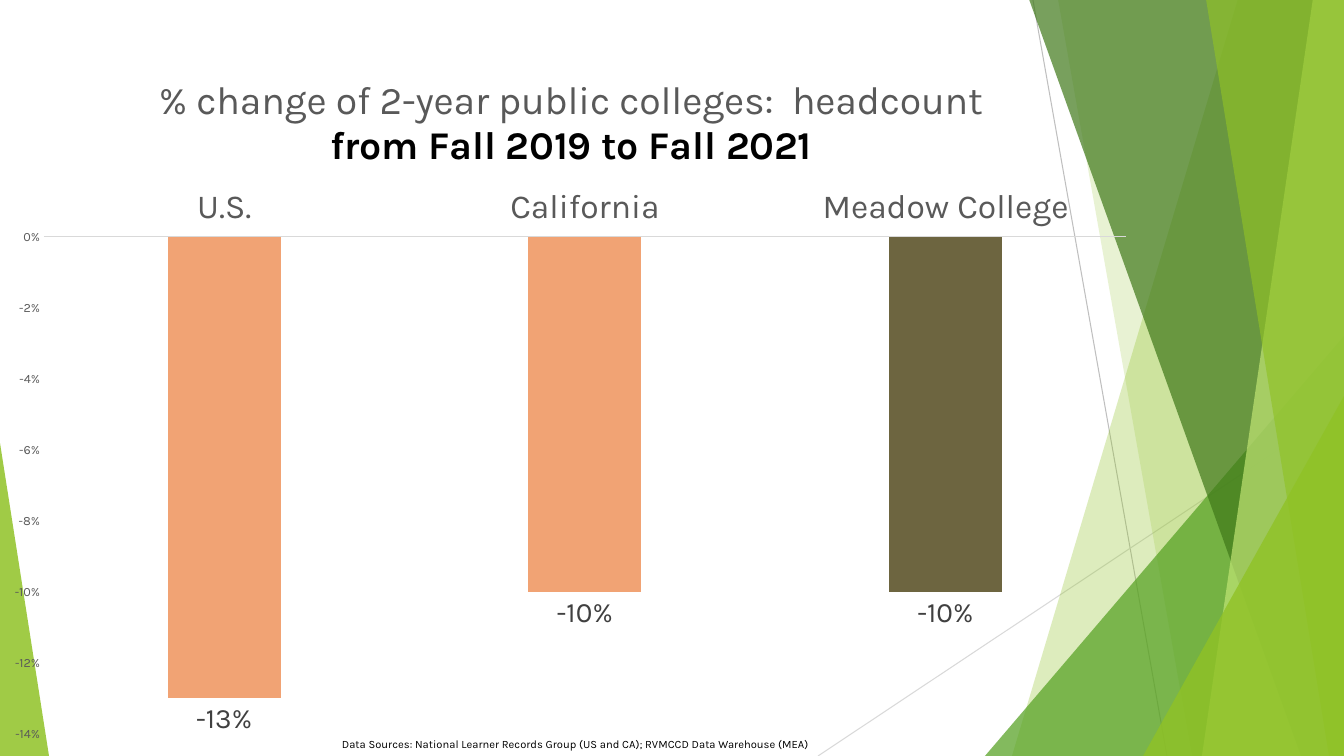
from lxml.etree import SubElement
from pptx import Presentation
from pptx.chart.data import CategoryChartData
from pptx.dml.color import RGBColor
from pptx.enum.chart import XL_CHART_TYPE, XL_LABEL_POSITION, XL_TICK_LABEL_POSITION, XL_TICK_MARK
from pptx.enum.shapes import MSO_CONNECTOR, MSO_SHAPE
from pptx.enum.text import MSO_AUTO_SIZE
from pptx.oxml import parse_xml
from pptx.oxml.ns import nsdecls, qn
from pptx.util import Pt

PX = 914400 / 100.8
SLIDE_W, SLIDE_H = 1344, 756
CHART_W, CHART_H = 1157, 702
FONT = "Karla"

BLACK = RGBColor(0x00, 0x00, 0x00)
DARK_GRAY = RGBColor(0x40, 0x40, 0x40)
GRAY = RGBColor(0x59, 0x59, 0x59)
MID_GRAY = RGBColor(0xBF, 0xBF, 0xBF)
LIGHT_GRAY = RGBColor(0xD9, 0xD9, 0xD9)
LIME = RGBColor(0x90, 0xC2, 0x26)
PALE_LIME = RGBColor(0xC0, 0xE4, 0x74)
GREEN = RGBColor(0x54, 0xA0, 0x21)
DARK_GREEN = RGBColor(0x3F, 0x78, 0x19)
ORANGE = RGBColor(0xF1, 0xA3, 0x74)
OLIVE = RGBColor(0x6D, 0x65, 0x40)

# Headcount change, with the colour of each column
HEADCOUNT = [
    ("U.S.", -0.13, ORANGE),
    ("California", -0.10, ORANGE),
    ("Meadow College", -0.10, OLIVE),
]
HEADING = [
    ("% change of 2-year public colleges:  headcount", False, GRAY),
    ("from Fall 2019 to Fall 2021", True, BLACK),
]


def px(length):
    return round(length * PX)


def style_font(font, size, color, bold=False):
    font.name = FONT
    font.size = Pt(size)
    font.bold = bold
    font.color.rgb = color


def paint(shape, color, opacity):
    """Flat, borderless fill; opacity in percent."""
    shape.shadow.inherit = False
    shape.line.fill.background()
    shape.fill.solid()
    shape.fill.fore_color.rgb = color
    srgb = shape.fill._xPr.find(".//" + qn("a:srgbClr"))
    SubElement(srgb, qn("a:alpha"), val=str(opacity * 1000))


def add_thin_line(slide, x1, y1, x2, y2, color):
    line = slide.shapes.add_connector(
        MSO_CONNECTOR.STRAIGHT, px(x1), px(y1), px(x2), px(y2))
    line.line.color.rgb = color
    line.line.width = Pt(0.75)
    SubElement(line._element.spPr, qn("a:effectLst"))


def add_band(slide, top_x, bottom_x, color, opacity):
    """Full-height band from a slanted left edge to the slide's right edge."""
    builder = slide.shapes.build_freeform(px(top_x), px(-1), scale=1.0)
    corners = [(SLIDE_W, -1), (SLIDE_W, SLIDE_H), (bottom_x, SLIDE_H)]
    builder.add_line_segments([(px(x), px(y)) for x, y in corners], close=True)
    paint(builder.convert_to_shape(), color, opacity)


def add_corner(slide, left, top, width, apex, color, opacity):
    """Triangle standing on the slide's bottom edge."""
    corner = slide.shapes.add_shape(
        MSO_SHAPE.ISOSCELES_TRIANGLE, px(left), px(top), px(width), px(SLIDE_H - top))
    corner.adjustments[0] = apex
    paint(corner, color, opacity)


def place_in_chart(element, position, left, top, width=None, height=None):
    """Manual layout in px from the chart's corner; a size marks the inner plot."""
    values = {"xMode": "edge", "yMode": "edge", "x": left / CHART_W, "y": top / CHART_H}
    if width:
        values = {"layoutTarget": "inner", **values,
                  "w": width / CHART_W, "h": height / CHART_H}
    tags = "".join(f'<c:{tag} val="{val}"/>' for tag, val in values.items())
    for old in element.findall(qn("c:layout")):
        element.remove(old)
    element.insert(position, parse_xml(
        f'<c:layout {nsdecls("c")}><c:manualLayout>{tags}</c:manualLayout></c:layout>'))


def add_heading(chart):
    title = chart.chart_title
    frame = title.text_frame
    frame.text = "\n".join(text for text, _, _ in HEADING)
    for paragraph, (_, bold, color) in zip(frame.paragraphs, HEADING):
        style_font(paragraph.runs[0].font, 28, color, bold)
    title.include_in_layout = False
    place_in_chart(title._element, 1, 164, 20)


def format_axes(chart):
    regions, change = chart.category_axis, chart.value_axis
    for axis, size in ((regions, 24), (change, 9)):
        axis.major_tick_mark = axis.minor_tick_mark = XL_TICK_MARK.NONE
        axis.has_major_gridlines = False
        style_font(axis.tick_labels.font, size, GRAY)
    regions.tick_label_position = XL_TICK_LABEL_POSITION.HIGH
    regions.format.line.color.rgb = LIGHT_GRAY
    regions.format.line.width = Pt(0.75)
    change.minimum_scale, change.maximum_scale = -0.14, 0
    change.major_unit = 0.02
    change.tick_labels.number_format = "0%"
    change.tick_labels.number_format_is_linked = False
    change.format.line.fill.background()


def format_columns(plot):
    plot.gap_width = 219
    plot.overlap = -27
    plot.vary_by_categories = False
    columns = plot.series[0]
    columns.invert_if_negative = False
    columns.format.fill.solid()
    columns.format.fill.fore_color.rgb = LIME
    for index, (_, _, color) in enumerate(HEADCOUNT):
        fill = columns.points[index].format.fill
        fill.solid()
        fill.fore_color.rgb = color
    labels = columns.data_labels
    labels.show_value = True
    labels.position = XL_LABEL_POSITION.OUTSIDE_END
    labels.number_format = "0%"
    labels.number_format_is_linked = False
    style_font(labels.font, 20, DARK_GRAY)


def add_headcount_chart(slide):
    data = CategoryChartData(number_format="0%")
    data.categories = [region for region, _, _ in HEADCOUNT]
    data.add_series("Series 1", [value for _, value, _ in HEADCOUNT])
    chart = slide.shapes.add_chart(
        XL_CHART_TYPE.COLUMN_CLUSTERED,
        px(-8), px(54), px(CHART_W), px(CHART_H), data).chart
    style_font(chart.font, 10, BLACK)
    chart.has_legend = False
    add_heading(chart)
    format_axes(chart)
    format_columns(chart.plots[0])
    place_in_chart(chart._chartSpace.chart.plotArea, 0, 52, 183, 1082, 497)


def add_source_note(slide):
    note = slide.shapes.add_textbox(px(332), px(732), px(492), px(24))
    frame = note.text_frame
    frame.word_wrap = False
    frame.auto_size = MSO_AUTO_SIZE.SHAPE_TO_FIT_TEXT
    frame.text = ("Data Sources: National Learner Records Group (US and CA); "
                  "RVMCCD Data Warehouse (MEA)")
    style_font(frame.paragraphs[0].runs[0].font, 8, BLACK)


def main():
    deck = Presentation()
    deck.slide_width, deck.slide_height = px(SLIDE_W), px(SLIDE_H)
    slide = deck.slides.add_slide(deck.slide_layouts[6])

    # Green facets, back to front
    add_thin_line(slide, 1033, 0, 1167, SLIDE_H, MID_GRAY)
    add_thin_line(slide, SLIDE_W, 406, 818, SLIDE_H, LIGHT_GRAY)
    add_band(slide, 1238, 1012, LIME, 30)
    add_band(slide, 1058, 1192, LIME, 20)
    add_corner(slide, 985, 336, 359, 1, GREEN, 72)
    add_band(slide, 1029, 1301, DARK_GREEN, 70)
    add_band(slide, 1313, 1202, PALE_LIME, 70)
    add_band(slide, 1206, 1329, LIME, 65)
    add_corner(slide, 1143, 396, 201, 1, LIME, 80)
    add_corner(slide, 0, 443, 49, 0, LIME, 85)

    # Chart and its sources
    add_headcount_chart(slide)
    add_source_note(slide)
    deck.save("out.pptx")


if __name__ == "__main__":
    main()
